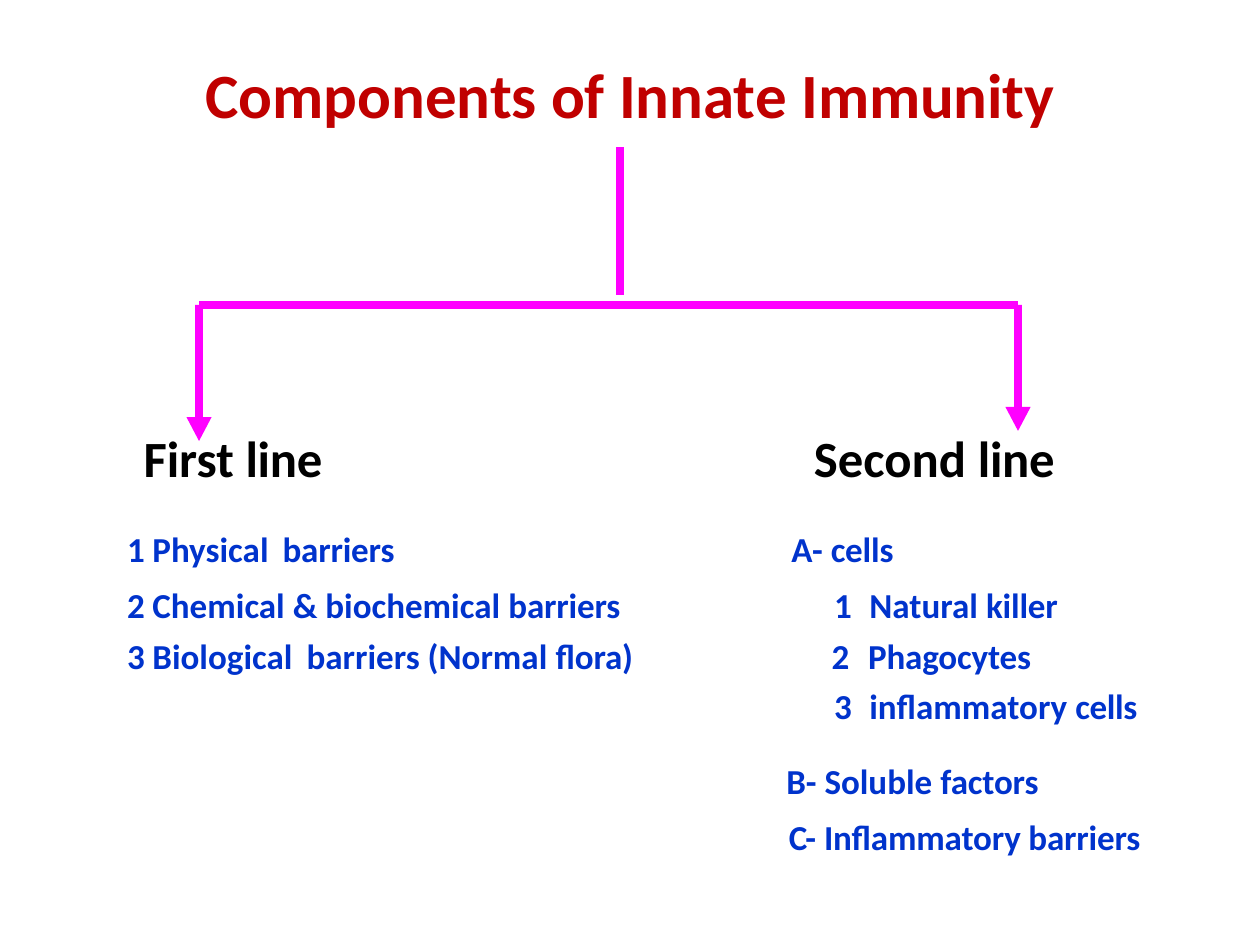
"""Build the slide on the components of innate immunity."""
from dataclasses import dataclass

from lxml import etree
from pptx import Presentation
from pptx.dml.color import RGBColor
from pptx.enum import shapes, text
from pptx.oxml import ns
from pptx.util import Inches, Pt

COLORS = {"title": "C00000", "heading": "000000", "body": "0033CC", "arrow": "FF00FF"}
FONT = "Calibri"
LINE_WIDTH = 4.56
BRANCH_Y = 2.42
SHAFT_HALF = 0.03
HEAD_HALF = 0.1
HEAD_LENGTH = 0.19
WIDE_SPACE = 3.4
TIGHT = -0.1


@dataclass
class Item:
    """A paragraph: runs, indents in inches, space before and run spacing in points."""
    runs: list[tuple[str, float]]
    margin: float = 0.01
    space: float = 0
    hanging: float = 0


@dataclass
class Block:
    """A text box with its place, style and paragraphs."""
    left: float
    top: float
    width: float
    height: float
    inset: float
    size: float
    color: str
    items: list[Item]


@dataclass
class Segment:
    """A straight line from one point to another."""
    start: tuple[float, float]
    end: tuple[float, float]


@dataclass
class Arrow:
    """A downward arrow from the branch line to its tip."""
    x: float
    tip: float


BLOCKS = [
    Block(0.09, 0.02, 9.71, 1.62, 0.42, 36, "title",
          [Item([("Components of Innate ", 0), ("Immunity", TIGHT)], 1.54, 1)]),
    Block(1.13, 3.37, 1.46, 0.51, 0.02, 29, "heading",
          [Item([("First ", 0), ("line", -0.2)], space=1.1)]),
    Block(6.45, 3.37, 1.95, 0.51, 0.02, 29, "heading",
          [Item([("Second ", 0), ("line", -0.2)], space=1.1)]),
    Block(0.99, 4.06, 4.07, 1.32, 0.13, 20, "body", [
        Item([("Physical", 0), (" ", WIDE_SPACE), ("barriers", TIGHT)], 0.22, 8.9, 0.2),
        Item([("Chemical & biochemical ", 0), ("barriers", TIGHT)], 0.22, 8, 0.2),
        Item([("Biological", 0), (" ", WIDE_SPACE), ("barriers (Normal ", 0),
              ("flora)", TIGHT)], 0.22, 4.8, 0.2),
    ]),
    Block(6.26, 4.06, 2.79, 1.72, 0.13, 20, "body", [
        Item([("A- ", 0), ("cells", TIGHT)], 0.02, 8.9),
        Item([("Natural ", 0), ("killer", TIGHT)], 0.64, 8, 0.28),
        Item([("Phagocytes", TIGHT)], 0.63, 4.8, 0.29),
        Item([("inflammatory ", 0), ("cells", -0.2)], 0.64, 4.8, 0.28),
    ]),
    Block(6.22, 5.9, 2.88, 0.91, 0.13, 20, "body", [
        Item([("B- Soluble ", 0), ("factors", TIGHT)], 0.02, 8.9),
        Item([("C- ", 0), ("Inflammatory barriers", TIGHT)], 0.04, 7.9),
    ]),
]

CROSSBAR = Segment((1.58, BRANCH_Y), (8.08, BRANCH_Y))
STEM = Segment((4.92, 1.17), (4.92, 2.34))
ARROWS = [Arrow(1.58, 3.5), Arrow(8.08, 3.42)]


def add_block(slide, block: Block) -> None:
    """Draw a text box and its paragraphs."""
    box = slide.shapes.add_textbox(Inches(block.left), Inches(block.top),
                                   Inches(block.width), Inches(block.height))
    frame = box.text_frame
    frame.word_wrap = True
    frame.vertical_anchor = text.MSO_ANCHOR.TOP
    frame.margin_left = frame.margin_right = frame.margin_bottom = 0
    frame.margin_top = Inches(block.inset)
    for index, item in enumerate(block.items):
        paragraph = frame.add_paragraph() if index else frame.paragraphs[0]
        paragraph.space_before = Pt(item.space)
        properties = paragraph._p.get_or_add_pPr()
        properties.set("marL", str(Inches(item.margin)))
        properties.set("indent", str(-Inches(item.hanging)))
        if item.hanging:
            etree.SubElement(properties, ns.qn("a:buAutoNum"), type="arabicPlain")
        for wording, spacing in item.runs:
            run = paragraph.add_run()
            run.text = wording
            run.font.name = FONT
            run.font.size = Pt(block.size)
            run.font.bold = True
            run.font.color.rgb = RGBColor.from_string(COLORS[block.color])
            run._r.get_or_add_rPr().set("spc", str(round(spacing * 100)))


def add_segment(slide, segment: Segment) -> None:
    """Draw a straight line."""
    connector = slide.shapes.add_connector(
        shapes.MSO_CONNECTOR.STRAIGHT,
        *(Inches(value) for value in segment.start + segment.end))
    connector.line.width = Pt(LINE_WIDTH)
    connector.line.color.rgb = RGBColor.from_string(COLORS["arrow"])
    etree.SubElement(connector._element.spPr, ns.qn("a:effectLst"))


def arrow_outline(arrow: Arrow) -> list[tuple[int, int]]:
    """Return the corners of a downward arrow."""
    neck = arrow.tip - HEAD_LENGTH
    corners = [(HEAD_HALF, neck), (SHAFT_HALF, neck), (SHAFT_HALF, BRANCH_Y),
               (-SHAFT_HALF, BRANCH_Y), (-SHAFT_HALF, neck), (-HEAD_HALF, neck),
               (0, arrow.tip)]
    return [(Inches(arrow.x + offset), Inches(y)) for offset, y in corners]


def add_arrows(slide, arrows: list[Arrow]) -> None:
    """Draw all arrows as one filled outline."""
    outlines = [arrow_outline(arrow) for arrow in arrows]
    builder = slide.shapes.build_freeform(*outlines[0][0])
    for index, outline in enumerate(outlines):
        if index:
            builder.move_to(*outline[0])
        builder.add_line_segments(outline[1:], close=True)
    shape = builder.convert_to_shape()
    shape.shadow.inherit = False
    shape.fill.solid()
    shape.fill.fore_color.rgb = RGBColor.from_string(COLORS["arrow"])
    shape.line.fill.background()


def main() -> None:
    """Build and save the slide."""
    presentation = Presentation()
    presentation.slide_width = Inches(10)
    presentation.slide_height = Inches(7.5)
    slide = presentation.slides.add_slide(presentation.slide_layouts[6])
    for block in BLOCKS:
        add_block(slide, block)
    add_segment(slide, CROSSBAR)
    add_arrows(slide, ARROWS)
    add_segment(slide, STEM)
    presentation.save("out.pptx")


if __name__ == "__main__":
    main()
